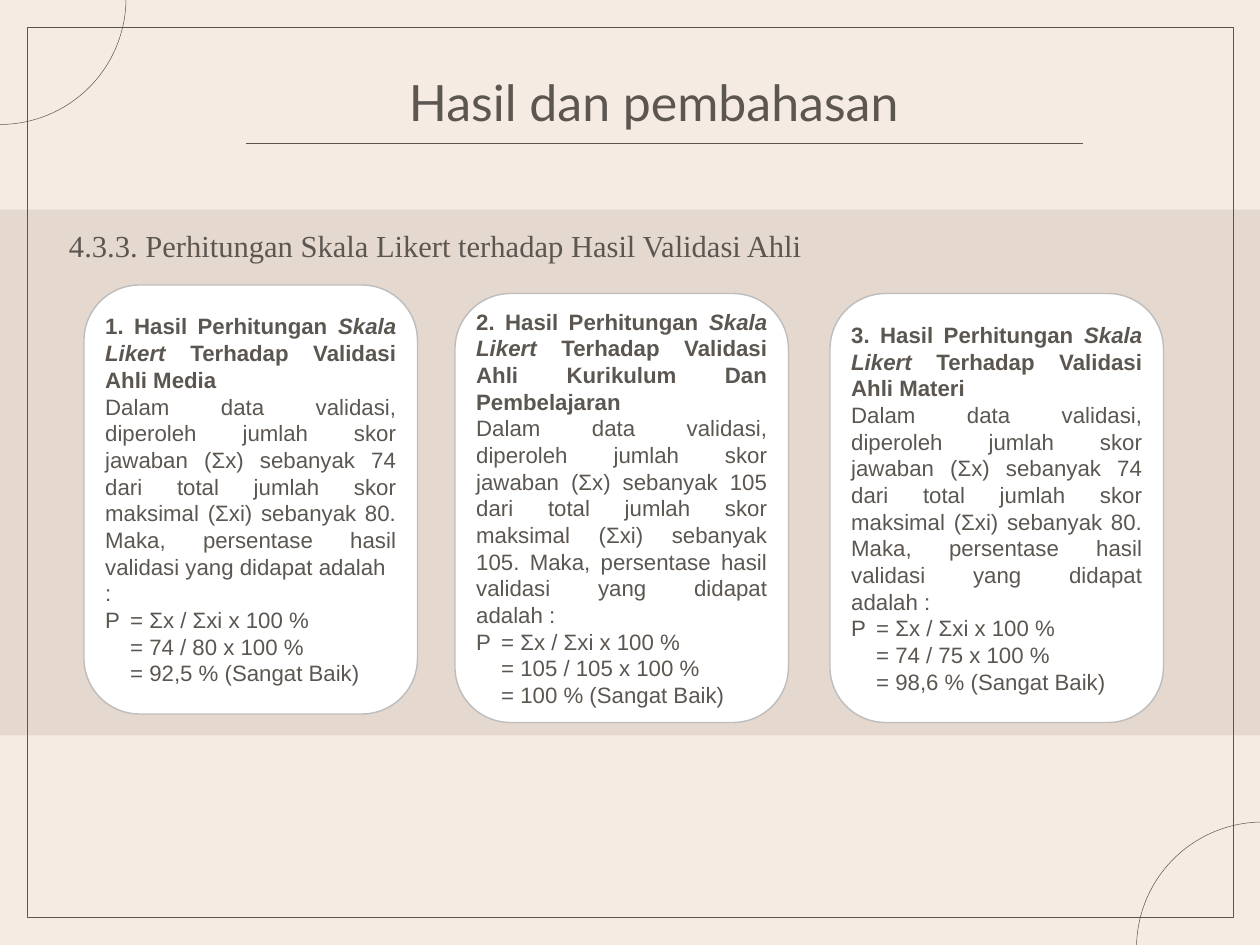
from lxml.etree import SubElement
from pptx import Presentation
from pptx.dml.color import RGBColor
from pptx.enum.shapes import MSO_CONNECTOR, MSO_SHAPE
from pptx.enum.text import MSO_ANCHOR, MSO_AUTO_SIZE, PP_ALIGN
from pptx.oxml.ns import qn
from pptx.util import Inches, Pt

TITLE = "Hasil dan pembahasan"
SUBTITLE = "4.3.3. Perhitungan Skala Likert terhadap Hasil Validasi Ahli"
EXPLANATION = (
    "Dalam data validasi, diperoleh jumlah skor jawaban (Σx) sebanyak {score} "
    "dari total jumlah skor maksimal (Σxi) sebanyak {maximum}. "
    "Maka, persentase hasil validasi yang didapat adalah{ending}"
)
FORMULA = ["P\t= Σx / Σxi x 100 %", "\t= {score} / {divisor} x 100 %",
           "\t= {percent} % (Sangat Baik)"]
VALIDATIONS = [
    dict(expert="Media", score=74, maximum=80, divisor=80, percent="92,5",
         ending="\n:", left=1.68, top=5.7),
    dict(expert="Kurikulum Dan Pembelajaran", score=105, maximum=105, divisor=105,
         percent="100", ending=" :", left=9.1, top=5.87),
    dict(expert="Materi", score=74, maximum=80, divisor=75, percent="98,6",
         ending=" :", left=16.6, top=5.87),
]
COLORS = dict(background="F5EBE2", band="E4D8CF", ink="5C5651",
              card="FFFFFF", edge="BDBDBD")
WIDTH, HEIGHT = 25.2, 18.9
CARD_WIDTH, CARD_HEIGHT = 6.67, 8.58
CIRCLE = 5.05
INSET = Inches(0.28)
HEADING_FRAME = dict(margin_left=INSET, margin_right=INSET, margin_top=INSET,
                     margin_bottom=INSET, word_wrap=True,
                     auto_size=MSO_AUTO_SIZE.NONE)
CARD_FRAME = dict(vertical_anchor=MSO_ANCHOR.MIDDLE, word_wrap=True)
CARD_FONT = dict(name="Arial", size=Pt(32))


def color(key):
    return RGBColor.from_string(COLORS[key])


def apply(target, values):
    for key, value in values.items():
        setattr(target, key, value)


def box(left, top, width, height):
    return [Inches(value) for value in (left, top, width, height)]


def add_outline(slide, kind, place, fill=None, line=None, weight=0.75):
    shape = slide.shapes.add_shape(kind, *box(*place))
    shape.shadow.inherit = False
    if fill:
        shape.fill.solid()
        shape.fill.fore_color.rgb = color(fill)
    else:
        shape.fill.background()
    if line:
        shape.line.color.rgb = color(line)
        shape.line.width = Pt(weight)
    else:
        shape.line.fill.background()
    return shape


def write(paragraph, pieces, align, font):
    paragraph.alignment = align
    for text, style in pieces:
        run = paragraph.add_run()
        run.text = text
        apply(run.font, {**font, **style})
        run.font.color.rgb = color("ink")


def add_heading(shape, place, text, anchor, align, font):
    apply(shape, dict(zip(("left", "top", "width", "height"), box(*place))))
    apply(shape.text_frame, {**HEADING_FRAME, "vertical_anchor": anchor})
    write(shape.text_frame.paragraphs[0], [(text, {})], align, font)


def add_card(slide, validation):
    place = validation["left"], validation["top"], CARD_WIDTH, CARD_HEIGHT
    card = add_outline(slide, MSO_SHAPE.ROUNDED_RECTANGLE, place, "card", "edge", 2)
    frame = card.text_frame
    apply(frame, CARD_FRAME)
    number = VALIDATIONS.index(validation) + 1
    heading = [
        (f"{number}. Hasil Perhitungan ", dict(bold=True)),
        ("Skala Likert", dict(bold=True, italic=True)),
        (f" Terhadap Validasi Ahli {validation['expert']}", dict(bold=True)),
    ]
    explanation = EXPLANATION.format(**validation).split("\n")
    rows = [(heading, PP_ALIGN.JUSTIFY)]
    rows += [([(text, {})], PP_ALIGN.JUSTIFY) for text in explanation]
    rows += [([(text.format(**validation), {})], PP_ALIGN.LEFT) for text in FORMULA]
    for index, (pieces, align) in enumerate(rows):
        paragraph = frame.add_paragraph() if index else frame.paragraphs[0]
        paragraph.line_spacing = Pt(38.4)
        write(paragraph, pieces, align, CARD_FONT)


def main():
    deck = Presentation()
    deck.slide_width, deck.slide_height = Inches(WIDTH), Inches(HEIGHT)
    slide = deck.slides.add_slide(deck.slide_layouts[5])
    slide.background.fill.solid()
    slide.background.fill.fore_color.rgb = color("background")

    add_outline(slide, MSO_SHAPE.RECTANGLE, (0, 4.19, WIDTH, 10.52), "band")
    for left, top, turn in ((-2.53, -2.56, 0), (22.73, 16.44, 180)):
        corner = add_outline(slide, MSO_SHAPE.PIE, (left, top, CIRCLE, CIRCLE), line="ink")
        corner.adjustments[0], corner.adjustments[1] = 0, 54.28
        corner.rotation = turn
    add_outline(slide, MSO_SHAPE.RECTANGLE, (0.54, 0.55, 24.12, 17.8), line="ink")

    title = slide.shapes.title
    add_heading(title, (4.93, 1.21, 16.29, 1.67), TITLE, MSO_ANCHOR.BOTTOM,
                PP_ALIGN.CENTER, dict(name="Lato", size=Pt(72)))
    title.text_frame.paragraphs[0].line_spacing = 0.7
    subtitle_place = 1.1, 4.28, 21.25, 1.25
    add_heading(slide.shapes.add_textbox(*box(*subtitle_place)), subtitle_place,
                SUBTITLE, MSO_ANCHOR.MIDDLE, PP_ALIGN.JUSTIFY,
                dict(name="Times New Roman", size=Pt(44)))

    underline = slide.shapes.add_connector(
        MSO_CONNECTOR.STRAIGHT, *box(4.93, 2.87, 21.65, 2.87))
    underline.line.color.rgb = color("ink")
    underline.line.width = Pt(0.75)
    SubElement(underline._element.spPr, qn("a:effectLst"))

    for validation in VALIDATIONS:
        add_card(slide, validation)
    deck.save("out.pptx")


if __name__ == "__main__":
    main()
